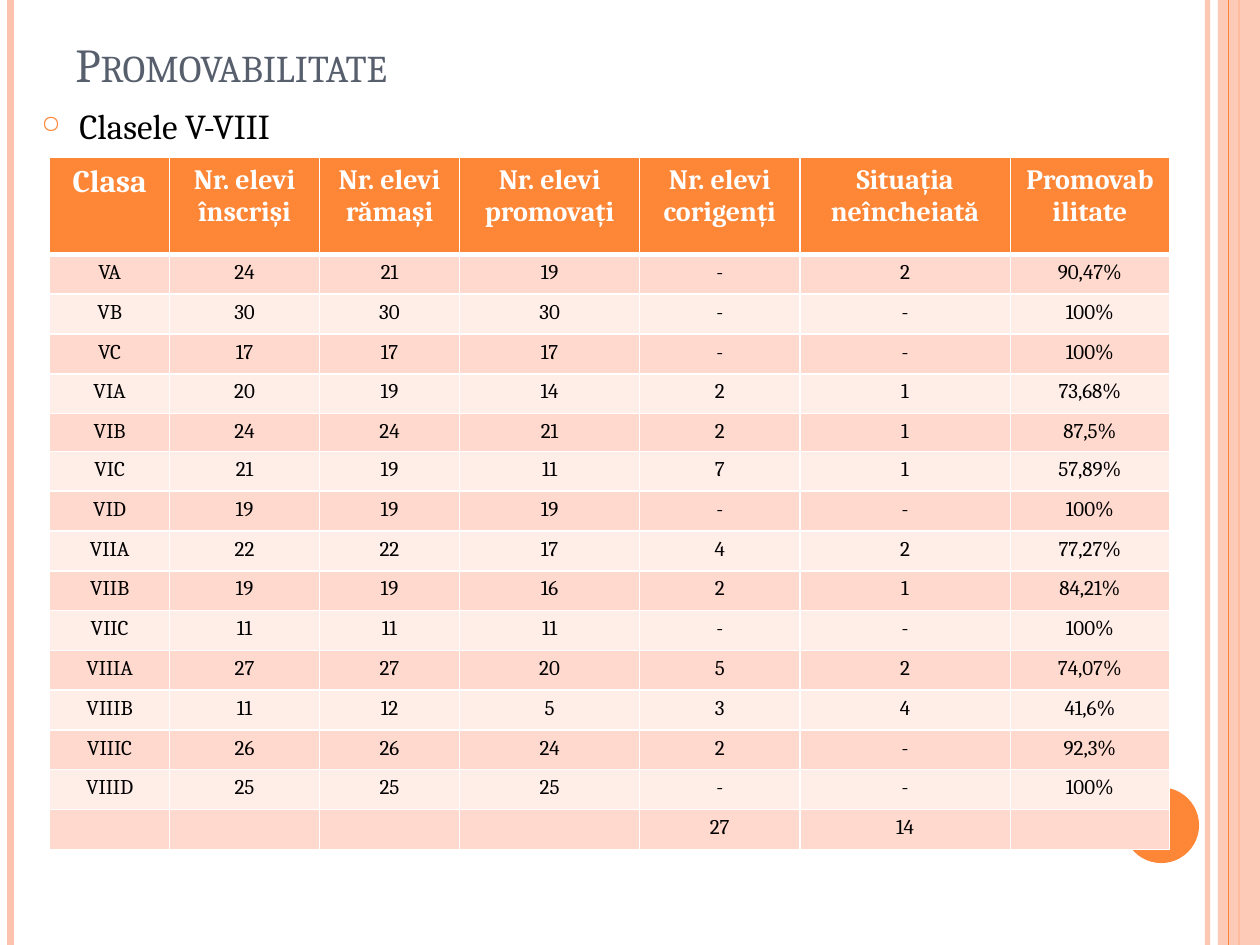
from dataclasses import dataclass

from lxml import etree
from pptx import Presentation
from pptx import util as u
from pptx.dml.color import RGBColor
from pptx.enum import shapes, text
from pptx.oxml.ns import qn

Pt = u.Pt


@dataclass(frozen=True)
class Theme:
    font: str = "Cambria"
    orange: str = "FE8637"
    peach: str = "FEC3AE"
    bands: tuple = ("FFD9CE", "FFEDE8")
    slate: str = "575F6D"
    black: str = "000000"
    white: str = "FFFFFF"
    title: int = 27
    lead: int = 20
    key: int = 18
    head: int = 16
    body: int = 12


HEAD = ["Clasa", "Nr. elevi înscriși", "Nr. elevi rămași", "Nr. elevi promovați",
        "Nr. elevi corigenți", "Situația neîncheiată", "Promovabilitate"]
ROWS = [
    ["VA", "24", "21", "19", "-", "2", "90,47%"],
    ["VB", "30", "30", "30", "-", "-", "100%"],
    ["VC", "17", "17", "17", "-", "-", "100%"],
    ["VIA", "20", "19", "14", "2", "1", "73,68%"],
    ["VIB", "24", "24", "21", "2", "1", "87,5%"],
    ["VIC", "21", "19", "11", "7", "1", "57,89%"],
    ["VID", "19", "19", "19", "-", "-", "100%"],
    ["VIIA", "22", "22", "17", "4", "2", "77,27%"],
    ["VIIB", "19", "19", "16", "2", "1", "84,21%"],
    ["VIIC", "11", "11", "11", "-", "-", "100%"],
    ["VIIIA", "27", "27", "20", "5", "2", "74,07%"],
    ["VIIIB", "11", "12", "5", "3", "4", "41,6%"],
    ["VIIIC", "26", "26", "24", "2", "-", "92,3%"],
    ["VIIID", "25", "25", "25", "-", "-", "100%"],
    ["", "", "", "", "27", "14", ""],
]
COLS = [68.5, 85.7, 80, 103, 91.5, 120.3, 91]
HIGH = [55.4] + [20.5 if row[0] == "VIB" else 22.75 for row in ROWS]


def sub(node, tag, **attrs):
    return etree.SubElement(node, qn(tag), attrs)


def fade(fill, alpha):
    if alpha < 100:
        sub(fill.fore_color._xFill.find(qn("a:srgbClr")), "a:alpha", val=str(alpha * 1000))


def write(para, words, size, color, font, bold=False, small=False, align=None):
    para.alignment = align
    if not words:
        para._p.get_or_add_endParaRPr().set("sz", str(size * 100))
        return
    run = para.add_run()
    run.text = words
    run.font.name, run.font.size, run.font.bold = font, Pt(size), bold
    run.font.color.rgb = RGBColor.from_string(color)
    if small:
        run.font._element.set("cap", "small")


class Deck:
    """Holds the theme and the current slide, and adds elements to it."""

    def __init__(self, theme):
        self.theme = theme
        self.file = Presentation()
        self.file.slide_width, self.file.slide_height = Pt(720), Pt(540)
        self.slide = self.file.slides.add_slide(self.file.slide_layouts[6])

    def stripe(self, x, color, width, alpha=100):
        line = self.slide.shapes.add_connector(
            shapes.MSO_CONNECTOR.STRAIGHT, Pt(x), Pt(0), Pt(x), Pt(540))
        line.line.width = Pt(width)
        line.line.color.rgb = RGBColor.from_string(color)
        fade(line.line.fill, alpha)
        sub(line._element.spPr, "a:effectLst")

    def shape(self, kind, box, color, alpha=100):
        item = self.slide.shapes.add_shape(kind, *map(Pt, box))
        item.shadow.inherit = False
        item.fill.solid()
        item.fill.fore_color.rgb = RGBColor.from_string(color)
        fade(item.fill, alpha)
        item.line.fill.background()

    def label(self, box, words, size, color, anchor, bullet=None, **style):
        frame = self.slide.shapes.add_textbox(*map(Pt, box)).text_frame
        frame.word_wrap = True
        frame.vertical_anchor = anchor
        para = frame.paragraphs[0]
        write(para, words, size, color, self.theme.font, **style)
        if bullet:
            para.space_before = Pt(6)
            props = para._p.get_or_add_pPr()
            props.set("marL", str(Pt(21.6)))
            props.set("indent", str(Pt(-21.6)))
            sub(sub(props, "a:buClr"), "a:srgbClr", val=self.theme.orange)
            sub(props, "a:buSzPct", val="70000")
            sub(props, "a:buChar", char=bullet)

    def cell(self, cell, words, size, color, fill, base=1, bold=False):
        props = cell._tc.get_or_add_tcPr()
        for side in "LRTB":
            width = base if side == "B" else 1
            edge = sub(props, f"a:ln{side}", w=str(Pt(width)))
            sub(sub(edge, "a:solidFill"), "a:srgbClr", val=self.theme.white)
        cell.fill.solid()
        cell.fill.fore_color.rgb = RGBColor.from_string(fill)
        write(cell.text_frame.paragraphs[0], words, size, color, self.theme.font,
              bold=bold, align=text.PP_ALIGN.CENTER)

    def table(self, x, y, head, rows, cols, high):
        t = self.theme
        grid = self.slide.shapes.add_table(
            len(high), len(cols), Pt(x), Pt(y), Pt(sum(cols)), Pt(sum(high))).table
        grid.first_row = grid.horz_banding = False
        for col, width in zip(grid.columns, cols):
            col.width = Pt(width)
        for row, height in zip(grid.rows, high):
            row.height = Pt(height)
        for c, words in enumerate(head):
            self.cell(grid.cell(0, c), words, t.head if c else t.key,
                      t.white, t.orange, base=3, bold=True)
        for r, row in enumerate(rows):
            for c, words in enumerate(row):
                self.cell(grid.cell(r + 1, c), words, t.body, t.black,
                          t.bands[r % 2], base=1)


def main():
    t = Theme()
    deck = Deck(t)
    kind = shapes.MSO_SHAPE
    deck.stripe(690, t.peach, 3, alpha=93)
    deck.stripe(6, t.peach, 4.5)
    deck.stripe(708, t.orange, 1.5)
    deck.shape(kind.RECTANGLE, (696, 0, 24, 540), t.peach, alpha=87)
    deck.stripe(702, t.orange, 0.75)
    deck.shape(kind.OVAL, (642, 450, 43.2, 43.2), t.orange)
    deck.label((36, 21.6, 588, 34.6), "Promovabilitate", t.title, t.slate,
               text.MSO_ANCHOR.BOTTOM, small=True)
    deck.label((16.6, 56.2, 675, 466.6), "Clasele V-VIII", t.lead, t.black,
               text.MSO_ANCHOR.TOP, bullet="○")
    deck.table(28.4, 90, HEAD, ROWS, COLS, HIGH)
    deck.file.save("out.pptx")


if __name__ == "__main__":
    main()
